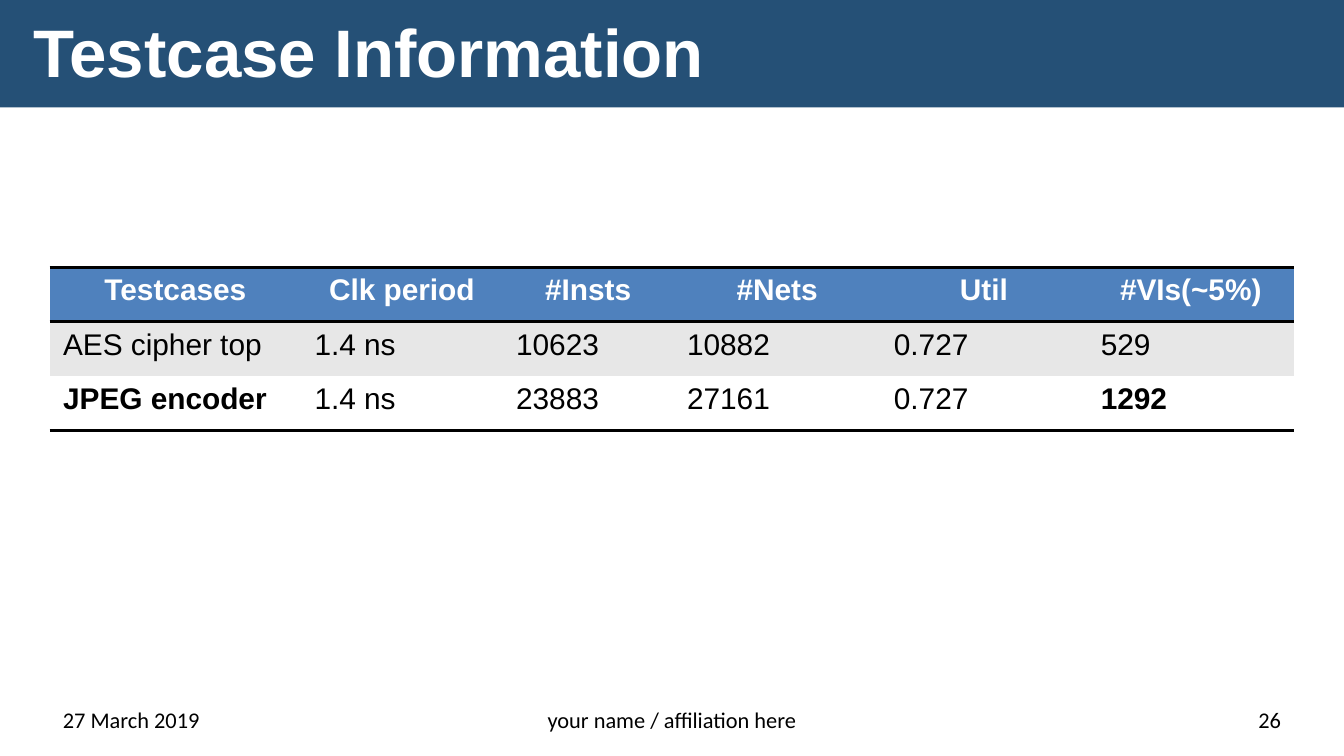
from dataclasses import dataclass

from lxml import etree
from pptx import Presentation
from pptx.dml.color import RGBColor
from pptx.enum.shapes import MSO_SHAPE
from pptx.enum.text import MSO_ANCHOR, PP_ALIGN
from pptx.oxml.ns import qn
from pptx.util import Cm, Pt

RECT = MSO_SHAPE.RECTANGLE
LEFT, CENTER, RIGHT = PP_ALIGN.LEFT, PP_ALIGN.CENTER, PP_ALIGN.RIGHT
MIDDLE, BOTTOM = MSO_ANCHOR.MIDDLE, MSO_ANCHOR.BOTTOM
TITLE_ONLY = 5
NO_STYLE = "{2D5ABB26-0587-4C30-8999-92F81FD0307C}"


@dataclass(frozen=True)
class Theme:
    banner: str = "255076"
    header: str = "4F81BD"
    band: str = "E7E7E7"
    white: str = "FFFFFF"
    black: str = "000000"
    font: str = "Arial"
    footer_font: str = "Calibri"
    title_size: int = 36
    table_size: int = 16
    footer_size: int = 12
    rule: int = 2


THEME = Theme()
SLIDE_W, SLIDE_H = Cm(25.4), Cm(14.29)
MARGIN = Cm(0.94)
COLUMNS = [4.75, 3.81, 3.23, 3.91, 3.91, 3.91]
ROW_H = Cm(1.03)
ROWS = [
    ["Testcases", "Clk period", "#Insts", "#Nets", "Util", "#VIs(~5%)"],
    ["AES cipher top", "1.4 ns", "10623", "10882", "0.727", "529"],
    ["JPEG encoder", "1.4 ns", "23883", "27161", "0.727", "1292"],
]
BOLD_ENTRIES = {"JPEG encoder", "1292"}
ROW_STYLES = [
    {"fill": THEME.header, "color": THEME.white, "align": CENTER, "edges": ("lnT", "lnB")},
    {"fill": THEME.band, "color": THEME.black, "align": LEFT, "edges": ()},
    {"fill": THEME.white, "color": THEME.black, "align": LEFT, "edges": ("lnB",)},
]


def set_fill(fill, color):
    fill.solid()
    fill.fore_color.rgb = RGBColor.from_string(color)


def write(tf, text, color, align=LEFT, **font):
    p = tf.paragraphs[0]
    p.alignment = align
    r = p.add_run()
    r.text = text
    for name, value in font.items():
        setattr(r.font, name, value)
    r.font.color.rgb = RGBColor.from_string(color)
    return p


def add_title(s, text):
    title = s.shapes.title
    box = {"left": Cm(0.38), "top": Cm(0.25), "width": Cm(24.64), "height": Cm(1.6)}
    for name, value in box.items():
        setattr(title, name, value)
    tf = title.text_frame
    tf.word_wrap = True
    tf.vertical_anchor = MIDDLE
    p = write(tf, text, THEME.white, name=THEME.font, size=Pt(THEME.title_size), bold=True)
    p.line_spacing = 0.9

    banner = s.shapes.add_shape(RECT, 0, 0, SLIDE_W, Cm(2.03))
    banner.shadow.inherit = False
    set_fill(banner.fill, THEME.banner)
    banner.line.fill.background()
    title.element.addprevious(banner.element)


def add_borders(cell, edges):
    tcPr = cell._tc.get_or_add_tcPr()
    for i, edge in enumerate(edges):
        ln = etree.Element(qn(f"a:{edge}"), w=str(Pt(THEME.rule)))
        fill = etree.SubElement(ln, qn("a:solidFill"))
        etree.SubElement(fill, qn("a:srgbClr"), val=THEME.black)
        tcPr.insert(i, ln)


def add_testcase_table(s):
    frame = s.shapes.add_table(len(ROWS), len(COLUMNS), MARGIN, Cm(5.05),
                               Cm(sum(COLUMNS)), ROW_H * len(ROWS))
    for style_id in frame.element.iter(qn("a:tableStyleId")):
        style_id.text = NO_STYLE
    table = frame.table
    for column, width in zip(table.columns, COLUMNS):
        column.width = Cm(width)
    for i, (row, style) in enumerate(zip(ROWS, ROW_STYLES)):
        table.rows[i].height = ROW_H
        for j, text in enumerate(row):
            cell = table.cell(i, j)
            set_fill(cell.fill, style["fill"])
            add_borders(cell, style["edges"])
            write(cell.text_frame, text, style["color"], style["align"],
                  name=THEME.font, size=Pt(THEME.table_size),
                  bold=i == 0 or text in BOLD_ENTRIES)


def add_footer(s, text, left, width, align):
    tf = s.shapes.add_textbox(left, Cm(13.23), width, Cm(0.76)).text_frame
    tf.word_wrap = True
    tf.vertical_anchor = BOTTOM
    write(tf, text, THEME.black, align, name=THEME.footer_font, size=Pt(THEME.footer_size))


def main():
    prs = Presentation()
    prs.slide_width, prs.slide_height = SLIDE_W, SLIDE_H
    s = prs.slides.add_slide(prs.slide_layouts[TITLE_ONLY])
    set_fill(s.background.fill, THEME.white)
    add_title(s, "Testcase Information")
    add_testcase_table(s)
    side, middle = Cm(6.53), Cm(8.59)
    add_footer(s, "27 March 2019", MARGIN, side, LEFT)
    add_footer(s, "your name / affiliation here", (SLIDE_W - middle) // 2, middle, CENTER)
    add_footer(s, "26", SLIDE_W - MARGIN - side, side, RIGHT)
    prs.save("out.pptx")


if __name__ == "__main__":
    main()
